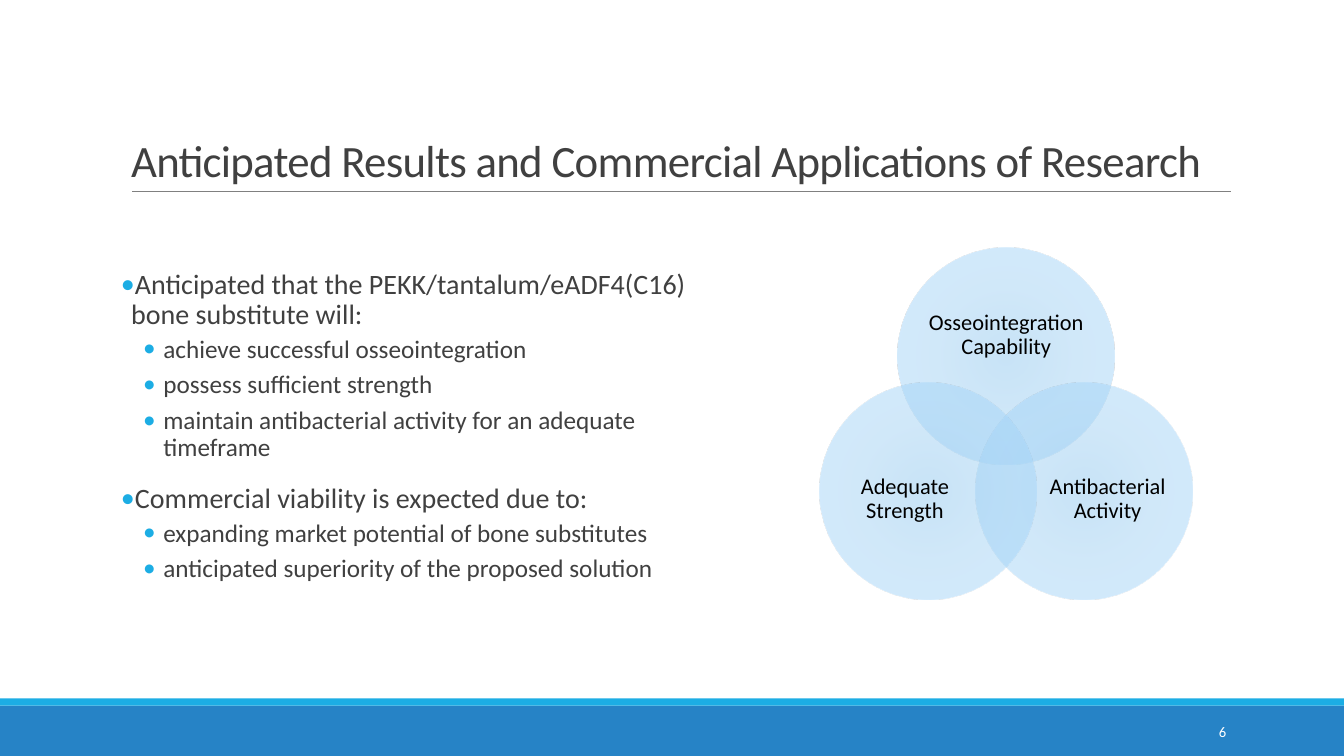
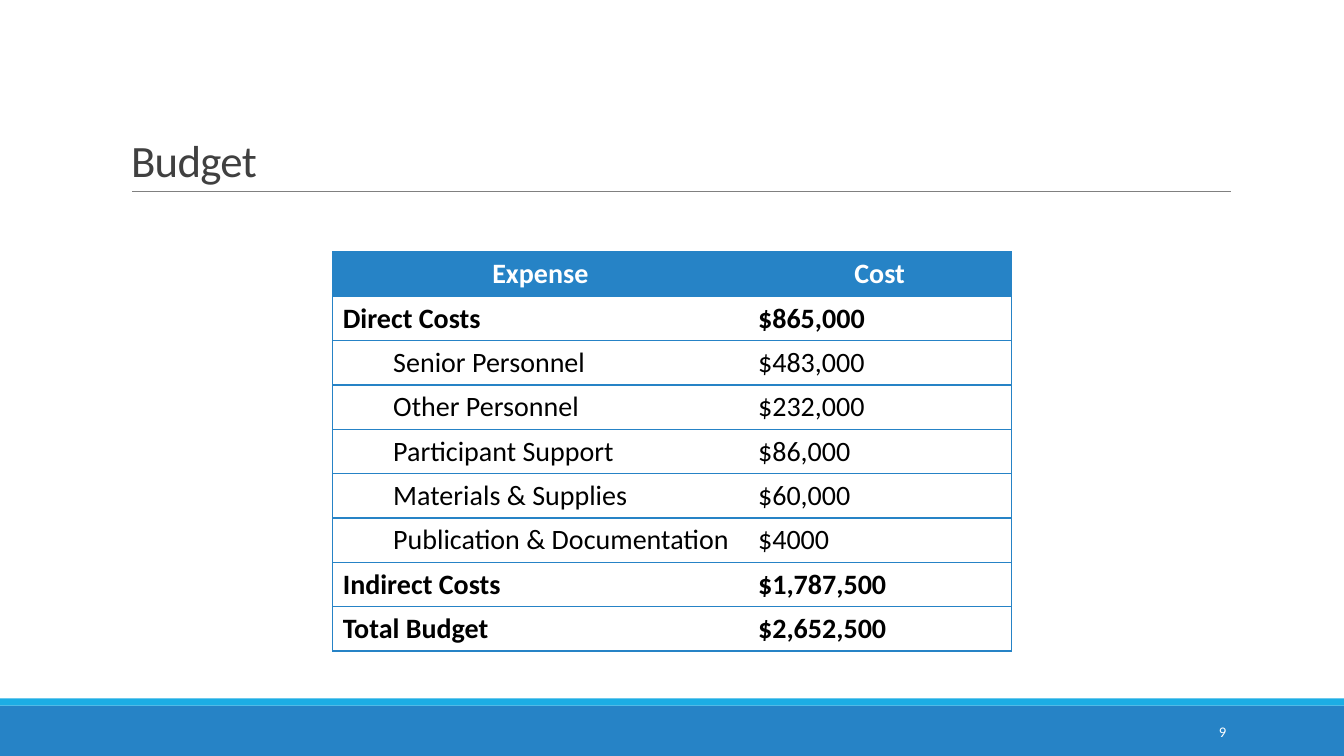
from lxml import etree
from pptx import Presentation
from pptx import util as u
from pptx.dml.color import RGBColor
from pptx.enum import shapes, text
from pptx.oxml import parse_xml
from pptx.oxml.ns import nsdecls, qn

FONT = "Calibri"
BLUE, CYAN, DARK, GRAY, WHITE, BLACK = "2683C6", "1CADE4", "404040", "808080", "FFFFFF", "000000"
LEFT, CENTER, RIGHT = text.PP_ALIGN.LEFT, text.PP_ALIGN.CENTER, text.PP_ALIGN.RIGHT
VENN_GLOW = [(0, "92C9F0"), (45, "A4D3F5"), (100, "A9D9FD")]
CIRCLE_SIZE = 2.15
LEVELS = [
    {"size": 20, "margin": 0.1, "indent": -0.1, "before": 12, "after": 2},
    {"size": 18, "margin": 0.42, "indent": -0.2, "before": 2, "after": 4},
]
RESULTS = [
    (0, "Anticipated that the PEKK/tantalum/eADF4(C16) bone substitute will:"),
    (1, "achieve successful osseointegration"),
    (1, "possess sufficient strength"),
    (1, "maintain antibacterial activity for an adequate timeframe"),
    (0, "Commercial viability is expected due to:"),
    (1, "expanding market potential of bone substitutes"),
    (1, "anticipated superiority of the proposed solution"),
]
VENN = [
    ((8.9, 2.46), "Osseointegration Capability", (9.19, 2.84, 1.58, 0.97)),
    ((9.68, 3.8), "Antibacterial Activity", (10.34, 4.36, 1.29, 1.18)),
    ((8.13, 3.8), "Adequate Strength", (8.33, 4.36, 1.29, 1.18)),
]
BUDGET = [
    ("Expense", "Cost"),
    ("Direct Costs", "$865,000"),
    ("Senior Personnel", "$483,000"),
    ("Other Personnel", "$232,000"),
    ("Participant Support", "$86,000"),
    ("Materials & Supplies", "$60,000"),
    ("Publication & Documentation", "$4000"),
    ("Indirect Costs", "$1,787,500"),
    ("Total Budget", "$2,652,500"),
]
DETAIL_ROWS = range(2, 7)


def rgb(color):
    return RGBColor.from_string(color)


def box(left, top, width, height):
    return [u.Inches(length) for length in (left, top, width, height)]


def place(item, *bounds):
    item.left, item.top, item.width, item.height = box(*bounds)


def style(paragraph, size, color, align=LEFT, spacing=None, bold=False):
    paragraph.alignment = align
    paragraph.line_spacing = spacing
    for run in paragraph.runs:
        run.font.name = FONT
        run.font.size = u.Pt(size)
        run.font.bold = bold
        run.font.color.rgb = rgb(color)


def add_plain_shape(slide, kind, *bounds):
    shape = slide.shapes.add_shape(kind, *box(*bounds))
    shape.shadow.inherit = False
    shape.line.fill.background()
    return shape


def add_band(slide, top, height, color):
    band = add_plain_shape(slide, shapes.MSO_SHAPE.RECTANGLE, 0, top, 13.33, height)
    band.fill.solid()
    band.fill.fore_color.rgb = rgb(color)


def add_rule(slide):
    rule = slide.shapes.add_connector(
        shapes.MSO_CONNECTOR.STRAIGHT, *box(1.31, 1.9, 12.21, 1.9))
    rule.line.color.rgb = rgb(GRAY)
    rule.line.width = u.Pt(0.5)
    etree.SubElement(rule._element.spPr, qn("a:effectLst"))


def add_label(slide, words, bounds, size, color, align, spacing=None, inset=0):
    frame = slide.shapes.add_textbox(*box(*bounds)).text_frame
    frame.word_wrap = True
    frame.vertical_anchor = text.MSO_ANCHOR.MIDDLE
    frame.margin_left = frame.margin_right = u.Inches(inset)
    frame.margin_top = frame.margin_bottom = 0
    frame.text = words
    style(frame.paragraphs[0], size, color, align, spacing)


def add_framed_slide(deck, layout, heading, number):
    slide = deck.slides.add_slide(deck.slide_layouts.get_by_name(layout))
    add_band(slide, 7, 0.5, BLUE)
    add_band(slide, 6.93, 0.07, CYAN)
    add_rule(slide)
    title = slide.shapes.title
    place(title, 1.2, 0.31, 11, 1.59)
    frame = title.text_frame
    frame.text = heading
    frame.vertical_anchor = text.MSO_ANCHOR.BOTTOM
    frame.auto_size = text.MSO_AUTO_SIZE.NONE
    style(frame.paragraphs[0], 32, DARK, spacing=0.85)
    frame.paragraphs[0].runs[0]._r.get_or_add_rPr().set("spc", "-50")
    add_label(slide, number, (10.83, 7.06, 1.43, 0.4), 10.5, WHITE, RIGHT, inset=0.1)
    return slide


def add_bullet(paragraph, margin, indent):
    props = paragraph._p.get_or_add_pPr()
    props.set("marL", str(u.Inches(margin)))
    props.set("indent", str(u.Inches(indent)))
    tint = etree.SubElement(props, qn("a:buClr"))
    etree.SubElement(tint, qn("a:srgbClr")).set("val", CYAN)
    etree.SubElement(props, qn("a:buFont")).set("typeface", FONT)
    etree.SubElement(props, qn("a:buChar")).set("char", "•")


def fill_list(body, entries):
    place(body, 1.2, 2.63, 5.67, 3.58)
    frame = body.text_frame
    frame.auto_size = text.MSO_AUTO_SIZE.NONE
    frame.margin_left = frame.margin_right = 0
    frame.text = "\n".join(words for _, words in entries)
    for paragraph, (level, _) in zip(frame.paragraphs, entries):
        look = LEVELS[level]
        paragraph.level = level
        paragraph.space_before = u.Pt(look["before"])
        paragraph.space_after = u.Pt(look["after"])
        style(paragraph, look["size"], DARK, spacing=0.9)
        add_bullet(paragraph, look["margin"], look["indent"])


def add_venn_circle(slide, left, top):
    circle = add_plain_shape(
        slide, shapes.MSO_SHAPE.OVAL, left, top, CIRCLE_SIZE, CIRCLE_SIZE)
    stops = "".join(
        f'<a:gs pos="{position * 1000}"><a:srgbClr val="{color}">'
        '<a:alpha val="50000"/></a:srgbClr></a:gs>'
        for position, color in VENN_GLOW)
    glow = parse_xml(
        f'<a:gradFill {nsdecls("a")} rotWithShape="1"><a:gsLst>{stops}</a:gsLst>'
        '<a:path path="circle"><a:fillToRect l="100000" t="100000" r="100000" b="100000"/>'
        '</a:path></a:gradFill>')
    circle._element.spPr.find(qn("a:prstGeom")).addnext(glow)


def add_borders(cell, sides):
    props = cell._tc.get_or_add_tcPr()
    for side in sides:
        props.append(parse_xml(
            f'<a:ln{side} {nsdecls("a")} w="12700"><a:solidFill>'
            f'<a:srgbClr val="{BLUE}"/></a:solidFill></a:ln{side}>'))


def add_budget_table(slide, rows):
    frame = slide.shapes.add_table(len(rows), 2, *box(3.3, 2.5, 6.73, 0.44 * len(rows)))
    table = frame.table
    table._tbl.tblPr.find(qn("a:tableStyleId")).text = "{2D5ABB26-0587-4C30-8999-92F81FD0307C}"
    for column, width in zip(table.columns, (4.12, 2.61)):
        column.width = u.Inches(width)
    for row, entries in enumerate(rows):
        header, detail = row == 0, row in DETAIL_ROWS
        for column, words in enumerate(entries):
            cell = table.cell(row, column)
            cell.text = words
            paragraph = cell.text_frame.paragraphs[0]
            style(paragraph, 20, WHITE if header else BLACK,
                  CENTER if header else LEFT, bold=not detail)
            if detail and column == 0:
                paragraph.level = 1
                paragraph._p.get_or_add_pPr().set("marL", str(u.Inches(0.5)))
            add_borders(cell, ("LTB", "RTB")[column])
            cell.fill.solid()
            cell.fill.fore_color.rgb = rgb(BLUE if header else WHITE)


def main():
    deck = Presentation()
    deck.slide_width, deck.slide_height = u.Inches(13.33), u.Inches(7.5)

    results = add_framed_slide(
        deck, "Title and Content",
        "Anticipated Results and Commercial Applications of Research", "6")
    fill_list(results.placeholders[1], RESULTS)
    for corner, words, bounds in VENN:
        add_venn_circle(results, *corner)
        add_label(results, words, bounds, 16, BLACK, CENTER, spacing=0.9)

    budget = add_framed_slide(deck, "Title Only", "Budget", "9")
    add_budget_table(budget, BUDGET)

    deck.save("out.pptx")


if __name__ == "__main__":
    main()
